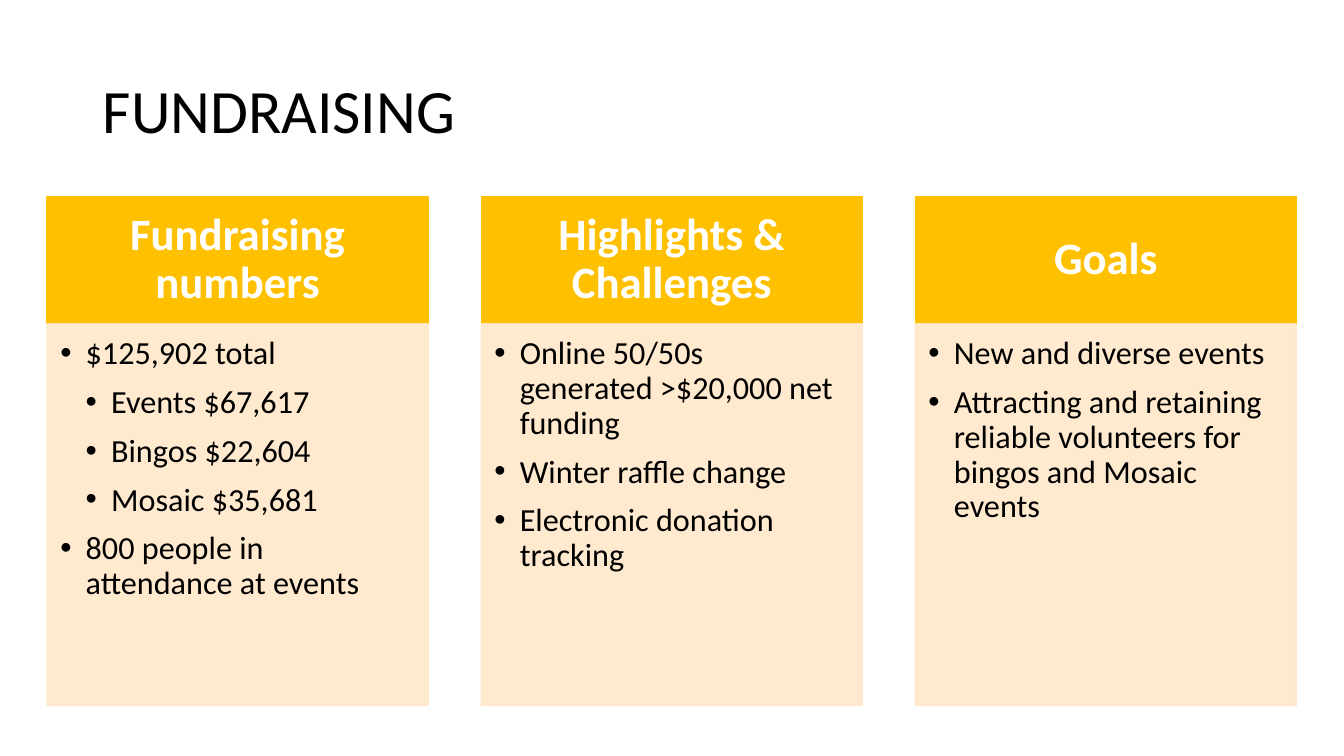
from lxml.etree import SubElement
from pptx import Presentation
from pptx.dml.color import RGBColor
from pptx.enum.shapes import MSO_SHAPE as Shape
from pptx.enum.text import MSO_ANCHOR as Anchor, PP_ALIGN as Align
from pptx.oxml.ns import qn
from pptx.util import Cm, Pt

COLORS = {"gold": "FFC000", "cream": "FFE8CA", "white": "FFFFFF", "black": "000000"}
FONT = "Calibri"

# Column geometry in centimetres
LEFT, PITCH, WIDTH = 1.19, 10.94, 9.6
HEAD_TOP, HEAD_HEIGHT = 4.95, 3.21
BODY_TOP, BODY_HEIGHT = HEAD_TOP + HEAD_HEIGHT, 9.62
INDENT = 0.64

# Heading, then bullets as (level, text)
COLUMNS = [
    ("Fundraising numbers", [
        (0, "$125,902 total"),
        (1, "Events $67,617"),
        (1, "Bingos $22,604"),
        (1, "Mosaic $35,681"),
        (0, "800 people in attendance at events"),
    ]),
    ("Highlights & Challenges", [
        (0, "Online 50/50s generated >$20,000 net funding"),
        (0, "Winter raffle change"),
        (0, "Electronic donation tracking"),
    ]),
    ("Goals", [
        (0, "New and diverse events"),
        (0, "Attracting and retaining reliable volunteers for bingos and Mosaic events"),
    ]),
]


def rgb(name):
    return RGBColor.from_string(COLORS[name])


def set_frame(box, anchor, left, top, right, bottom):
    frame = box.text_frame
    frame.word_wrap = True
    frame.vertical_anchor = anchor
    frame.margin_left, frame.margin_top = Cm(left), Cm(top)
    frame.margin_right, frame.margin_bottom = Cm(right), Cm(bottom)
    return frame


def add_bullet(para, level):
    para.level = level
    props = para._p.get_or_add_pPr()
    props.set("marL", str(Cm(INDENT * (level + 1))))
    props.set("indent", str(-Cm(INDENT)))
    color = SubElement(props, qn("a:buClr"))
    SubElement(color, qn("a:srgbClr"), val=COLORS["black"])
    SubElement(props, qn("a:buFont"), typeface="Arial")
    SubElement(props, qn("a:buChar"), char="•")


def write(para, text, size, color="black", bold=False, align=Align.LEFT, before=0):
    para.alignment = align
    para.line_spacing = 0.9
    para.space_before = Pt(before)
    span = para.add_run()
    span.text = text
    span.font.name = FONT
    span.font.size = Pt(size)
    span.font.bold = bold
    span.font.color.rgb = rgb(color)


def add_panel(page, left, top, height, color, opacity=100):
    box = page.shapes.add_shape(Shape.RECTANGLE, Cm(left), Cm(top), Cm(WIDTH), Cm(height))
    box.shadow.inherit = False
    box.line.width = Pt(1)
    for fill in (box.fill, box.line.fill):
        fill.solid()
        fill.fore_color.rgb = rgb(color)
    if opacity < 100:
        for tint in box._element.spPr.iter(qn("a:srgbClr")):
            SubElement(tint, qn("a:alpha"), val=str(opacity * 1000))
    return box


def add_title(page, text):
    box = page.shapes.add_textbox(Cm(2.34), Cm(1.02), Cm(29.21), Cm(3.68))
    frame = set_frame(box, Anchor.MIDDLE, 0.25, 0.13, 0.25, 0.13)
    write(frame.paragraphs[0], text, 44)


def add_column(page, left, heading, bullets):
    # Heading band
    head = add_panel(page, left, HEAD_TOP, HEAD_HEIGHT, "gold")
    frame = set_frame(head, Anchor.MIDDLE, 0.64, 0.36, 0.64, 0.36)
    write(frame.paragraphs[0], heading, 32, color="white", bold=True, align=Align.CENTER)

    # Bullet panel
    body = add_panel(page, left, BODY_TOP, BODY_HEIGHT, "cream", opacity=90)
    frame = set_frame(body, Anchor.TOP, 0.33, 0.33, 0.46, 0.51)
    for index, (level, text) in enumerate(bullets):
        para = frame.add_paragraph() if index else frame.paragraphs[0]
        add_bullet(para, level)
        write(para, text, 23, before=10 if index else 0)


def main():
    deck = Presentation()
    deck.slide_width, deck.slide_height = Cm(33.87), Cm(19.05)
    page = deck.slides.add_slide(deck.slide_layouts[6])
    add_title(page, "FUNDRAISING")
    for index, (heading, bullets) in enumerate(COLUMNS):
        add_column(page, LEFT + index * PITCH, heading, bullets)
    deck.save("out.pptx")


if __name__ == "__main__":
    main()
